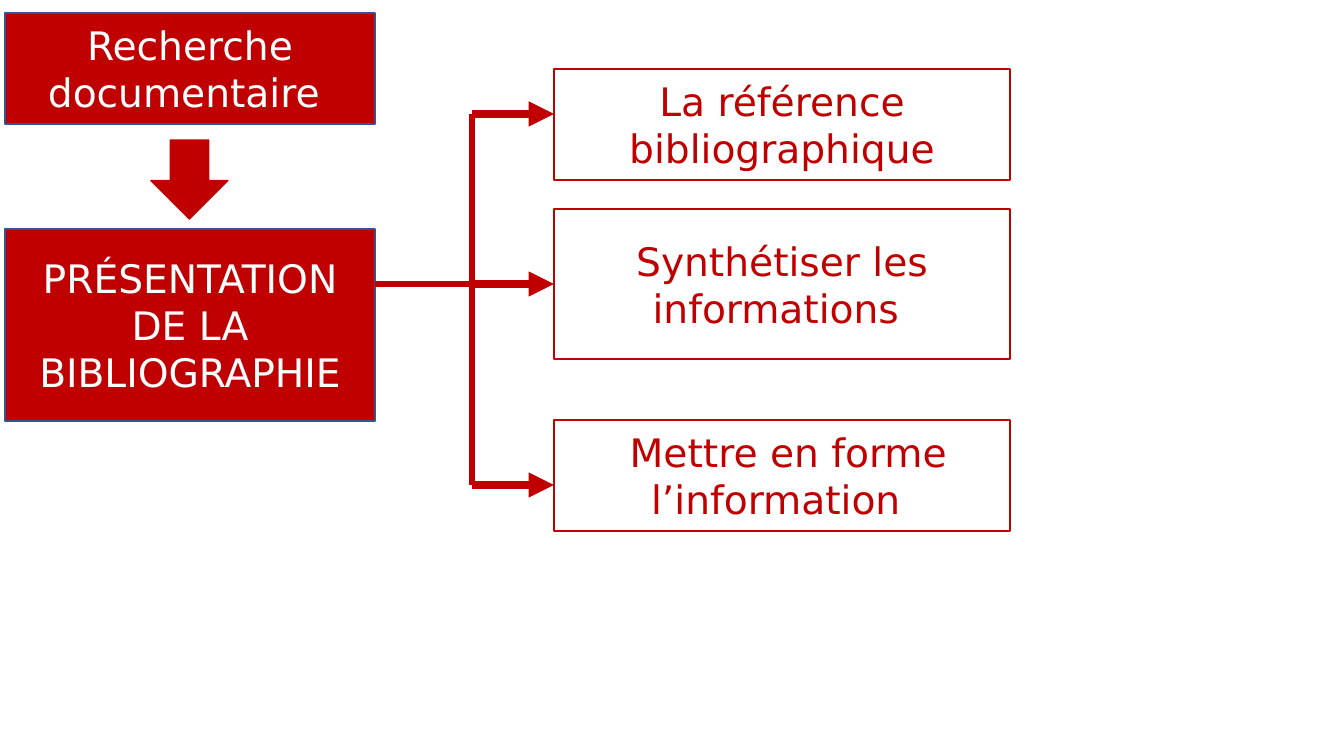
"""Draw the bibliography flow: two red steps and three outlined topics."""
from dataclasses import dataclass
from typing import Optional

from lxml.etree import SubElement as Sub
from pptx import Presentation
from pptx.dml.color import RGBColor as Rgb
from pptx.enum.shapes import MSO_CONNECTOR as Link, MSO_SHAPE as Form
from pptx.enum.text import MSO_ANCHOR as Anchor, PP_ALIGN as Align
from pptx.oxml.ns import qn
from pptx.slide import Slide
from pptx.util import Emu, Pt

SCALE = 914400 / 100.8
WIDE, HIGH = 1344, 756
HUES = {"red": "C00000", "navy": "325491", "white": "FFFFFF"}
FONT = {"name": "DejaVu Sans", "size": Pt(28)}
STEP_X, STEP_W = 5, 370
STEM_X = 472
TOPIC_X, TOPIC_W = 554, 456


@dataclass(frozen=True)
class Box:
    left: int
    top: int
    width: int
    height: int
    text: str = ""
    fill: Optional[str] = "red"
    edge: str = "red"
    ink: str = "white"
    form: Form = Form.RECTANGLE


@dataclass(frozen=True)
class Line:
    x1: int
    y1: int
    x2: int
    y2: int
    weight: float = 4.5
    head: bool = False


def step(top: int, height: int, text: str) -> Box:
    return Box(STEP_X, top, STEP_W, height, text, edge="navy")


def topic(top: int, height: int, text: str) -> Box:
    return Box(TOPIC_X, top, TOPIC_W, height, text, fill=None, ink="red")


BOXES = [
    step(13, 111, "Recherche documentaire "),
    Box(151, 140, 77, 79, form=Form.DOWN_ARROW),
    step(229, 192, "PRÉSENTATION DE LA BIBLIOGRAPHIE"),
    topic(69, 111, "La référence bibliographique"),
    topic(209, 150, "Synthétiser les informations "),
    topic(420, 111, " Mettre en forme l’information "),
]
ROWS = [114, 284, 485]
LINES = [
    Line(STEP_X + STEP_W, ROWS[1], STEM_X, ROWS[1]),
    Line(STEM_X, ROWS[0], STEM_X, ROWS[-1]),
    *(Line(STEM_X, row, TOPIC_X, row, 6, True) for row in ROWS),
]


def px(size: int) -> Emu:
    return Emu(round(size * SCALE))


def hue(name: str) -> Rgb:
    return Rgb.from_string(HUES[name])


def draw_box(slide: Slide, box: Box) -> None:
    place = map(px, (box.left, box.top, box.width, box.height))
    shape = slide.shapes.add_shape(box.form, *place)
    shape.shadow.inherit = False
    if box.fill:
        shape.fill.solid()
        shape.fill.fore_color.rgb = hue(box.fill)
    else:
        shape.fill.background()
    shape.line.color.rgb = hue(box.edge)
    shape.line.width = Pt(1)
    if not box.text:
        return
    frame = shape.text_frame
    frame.word_wrap = True
    frame.vertical_anchor = Anchor.MIDDLE
    para = frame.paragraphs[0]
    para.alignment = Align.CENTER
    run = para.add_run()
    run.text = box.text
    for key, value in FONT.items():
        setattr(run.font, key, value)
    run.font.color.rgb = hue(box.ink)


def draw_line(slide: Slide, line: Line) -> None:
    ends = map(px, (line.x1, line.y1, line.x2, line.y2))
    link = slide.shapes.add_connector(Link.STRAIGHT, *ends)
    link.line.color.rgb = hue("red")
    link.line.width = Pt(line.weight)
    props = link.element.spPr
    if line.head:
        Sub(props.find(qn("a:ln")), qn("a:tailEnd"), type="triangle")
    Sub(props, qn("a:effectLst"))


def main() -> None:
    deck = Presentation()
    deck.slide_width, deck.slide_height = px(WIDE), px(HIGH)
    slide = deck.slides.add_slide(deck.slide_layouts[6])
    for box in BOXES:
        draw_box(slide, box)
    for line in LINES:
        draw_line(slide, line)
    deck.save("out.pptx")


if __name__ == "__main__":
    main()
